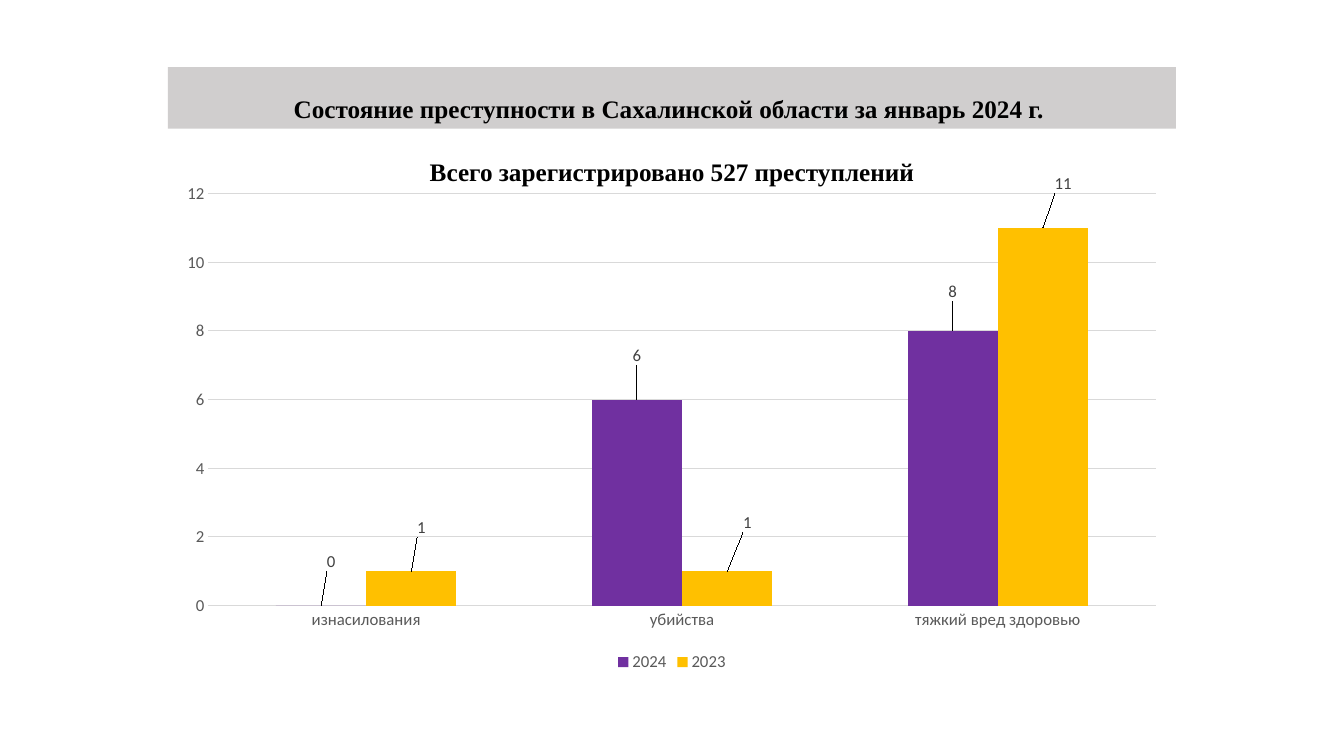
"""Build a slide with a column chart of crime counts in Sakhalin for January."""
from dataclasses import dataclass

import lxml.etree
import pptx
import pptx.chart.data
import pptx.dml.color
import pptx.enum.chart
import pptx.enum.text
import pptx.oxml.ns
import pptx.util

Pt = pptx.util.Pt


@dataclass(frozen=True)
class Theme:
    band: str = "D0CECE"
    ink: str = "000000"
    axis: str = "595959"
    label: str = "404040"
    grid: str = "D9D9D9"
    head_font: str = "Times New Roman"
    chart_font: str = "Calibri"
    head_size: int = 18
    chart_size: int = 12


@dataclass(frozen=True)
class Box:
    left: float
    top: float
    width: float
    height: float


@dataclass(frozen=True)
class Heading:
    index: int
    text: str
    box: Box
    anchor: pptx.enum.text.MSO_ANCHOR
    spacing: float
    before: int


@dataclass(frozen=True)
class Series:
    name: str
    color: str
    counts: tuple[int, ...]
    shifts: tuple[tuple[float, float], ...]


THEME = Theme()
LEFT, WIDTH = 120, 720
CHART = Box(LEFT, 124, WIDTH, 359)
PLOT = Box(0.04, 0.04, 0.94, 0.82)
CRIMES = ("изнасилования", "убийства", "тяжкий вред здоровью")
HEADINGS = (
    Heading(0, "Состояние преступности в Сахалинской области за январь 2024 г. ",
            Box(LEFT, 48, WIDTH, 44), pptx.enum.text.MSO_ANCHOR.BOTTOM, 0.9, 0),
    Heading(1, "Всего зарегистрировано 527 преступлений",
            Box(LEFT, 112, WIDTH, 26), pptx.enum.text.MSO_ANCHOR.TOP, 0.8, 10),
)
YEARS = (
    Series("2024", "7030A0", (0, 6, 8), ((0.01, -0.06), (0, -0.06), (0, -0.05))),
    Series("2023", "FFC000", (1, 1, 11), ((0.01, -0.06), (0.02, -0.07), (0.02, -0.06))),
)


def rgb(code: str) -> pptx.dml.color.RGBColor:
    return pptx.dml.color.RGBColor.from_string(code)


def style(font, face: str, size: int, color: str, bold: bool = False) -> None:
    font.name, font.size, font.bold = face, Pt(size), bold
    font.color.rgb = rgb(color)


def make_layout(**values) -> lxml.etree._Element:
    qn = pptx.oxml.ns.qn
    layout = lxml.etree.Element(qn("c:layout"))
    manual = lxml.etree.SubElement(layout, qn("c:manualLayout"))
    for tag, value in values.items():
        lxml.etree.SubElement(manual, qn(f"c:{tag}")).set("val", str(value))
    return layout


def draw_heading(slide, item: Heading) -> None:
    shape = slide.placeholders[item.index]
    box = item.box
    shape.left, shape.top = Pt(box.left), Pt(box.top)
    shape.width, shape.height = Pt(box.width), Pt(box.height)
    frame = shape.text_frame
    frame.auto_size = pptx.enum.text.MSO_AUTO_SIZE.NONE
    frame.word_wrap = True
    frame.vertical_anchor = item.anchor
    line = frame.paragraphs[0]
    line.alignment = pptx.enum.text.PP_ALIGN.CENTER
    line.line_spacing = item.spacing
    line.space_before = Pt(item.before)
    run = line.add_run()
    run.text = item.text
    style(run.font, THEME.head_font, THEME.head_size, THEME.ink, True)


def style_axis(axis) -> None:
    axis.major_tick_mark = pptx.enum.chart.XL_TICK_MARK.NONE
    axis.minor_tick_mark = pptx.enum.chart.XL_TICK_MARK.NONE
    axis.format.line.fill.background()
    style(axis.tick_labels.font, THEME.chart_font, THEME.chart_size, THEME.axis)


def style_series(series, year: Series) -> None:
    series.format.fill.solid()
    series.format.fill.fore_color.rgb = rgb(year.color)
    series.invert_if_negative = False
    above = pptx.enum.chart.XL_LABEL_POSITION.OUTSIDE_END
    labels = series.data_labels
    labels.show_value = True
    labels.position = above
    style(labels.font, THEME.chart_font, THEME.chart_size, THEME.label)
    for index in range(len(year.counts)):
        label = series.points[index].data_label
        label.position = above
        style(label.font, THEME.chart_font, THEME.chart_size, THEME.label)
    marks = series._element.xpath("c:dLbls/c:dLbl")
    for mark, (across, down) in zip(marks, year.shifts):
        mark.insert(1, make_layout(x=across, y=down))


def draw_chart(slide) -> None:
    data = pptx.chart.data.CategoryChartData()
    data.categories = CRIMES
    for year in YEARS:
        data.add_series(year.name, year.counts)
    kind = pptx.enum.chart.XL_CHART_TYPE.COLUMN_CLUSTERED
    chart = slide.shapes.add_chart(kind, Pt(CHART.left), Pt(CHART.top),
                                   Pt(CHART.width), Pt(CHART.height), data).chart
    style(chart.font, THEME.chart_font, THEME.chart_size, THEME.axis)
    chart.has_title = False
    chart.has_legend = True
    chart.legend.position = pptx.enum.chart.XL_LEGEND_POSITION.BOTTOM
    chart.legend.include_in_layout = False
    style(chart.legend.font, THEME.chart_font, THEME.chart_size, THEME.axis)

    style_axis(chart.category_axis)
    style_axis(chart.value_axis)
    chart.category_axis.format.line.color.rgb = rgb(THEME.grid)
    chart.value_axis.minimum_scale = 0
    chart.value_axis.maximum_scale = 12
    chart.value_axis.major_unit = 2
    grid = chart.value_axis.major_gridlines.format.line
    grid.color.rgb = rgb(THEME.grid)
    grid.width = Pt(0.75)

    plot = chart.plots[0]
    plot.gap_width = 150
    plot.overlap = 0
    plot.vary_by_categories = False
    for series, year in zip(plot.series, YEARS):
        style_series(series, year)

    area = chart._chartSpace.xpath("c:chart/c:plotArea")[0]
    for old in area.xpath("c:layout"):
        area.remove(old)
    area.insert(0, make_layout(layoutTarget="inner", xMode="edge", yMode="edge",
                               x=PLOT.left, y=PLOT.top, w=PLOT.width, h=PLOT.height))


def main() -> None:
    deck = pptx.Presentation()
    deck.slide_width, deck.slide_height = Pt(960), Pt(540)
    slide = deck.slides.add_slide(deck.slide_layouts[0])
    for item in HEADINGS:
        draw_heading(slide, item)
    band = slide.shapes.title.fill
    band.solid()
    band.fore_color.rgb = rgb(THEME.band)
    draw_chart(slide)
    deck.save("out.pptx")


if __name__ == "__main__":
    main()
